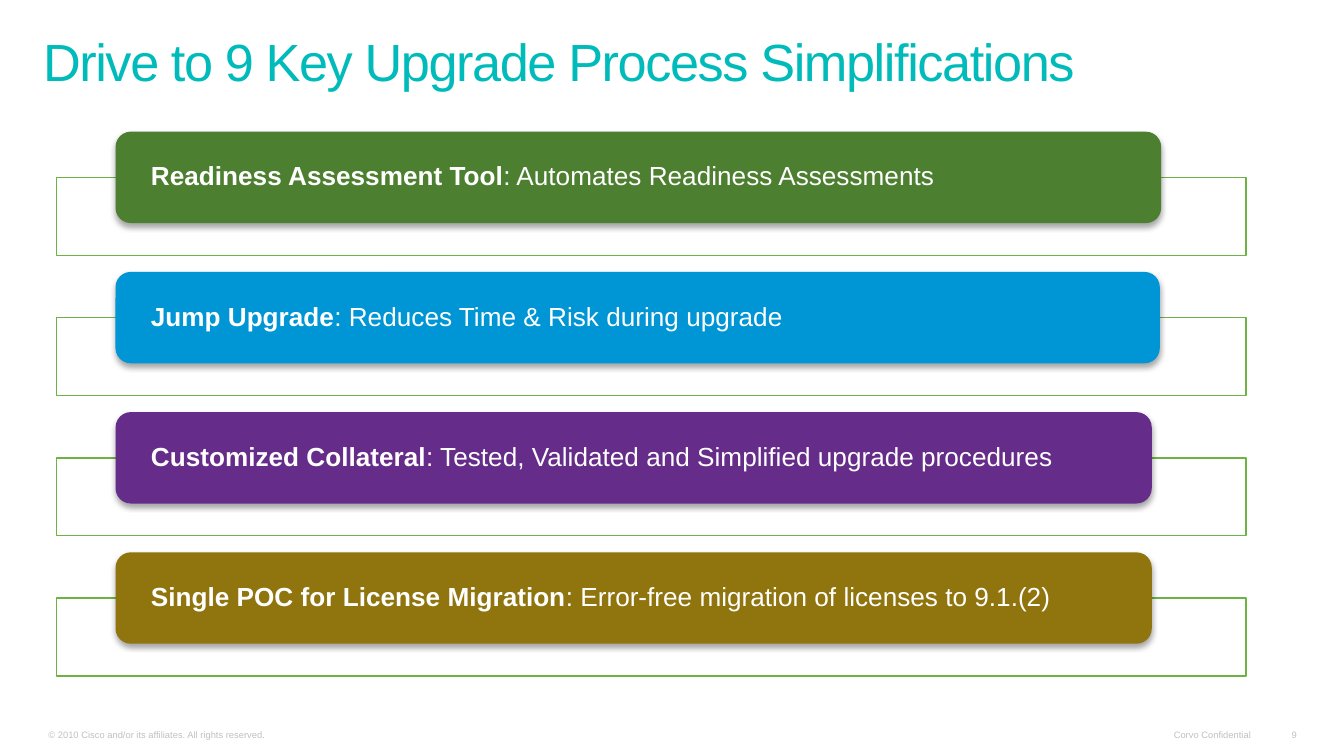
from lxml import etree
from pptx import Presentation
from pptx.dml.color import RGBColor
from pptx.enum.shapes import MSO_SHAPE
from pptx.enum.text import MSO_ANCHOR, MSO_AUTO_SIZE, PP_ALIGN
from pptx.oxml.ns import qn
from pptx.util import Inches, Pt

RECTANGLE = MSO_SHAPE.RECTANGLE
ROUNDED = MSO_SHAPE.ROUNDED_RECTANGLE
MIDDLE, BOTTOM = MSO_ANCHOR.MIDDLE, MSO_ANCHOR.BOTTOM
LEFT, RIGHT = PP_ALIGN.LEFT, PP_ALIGN.RIGHT
NO_AUTOFIT = MSO_AUTO_SIZE.NONE

COLORS = {
    "title": "01BBBB",
    "frame": "6DB344",
    "white": "FFFFFF",
    "footer": "C0C0C0",
    "shadow": "000000",
    "green": "4D7F30",
    "blue": "0096D6",
    "purple": "652D89",
    "gold": "90750F",
}

SIMPLIFICATIONS = [
    ("Readiness Assessment Tool", ": Automates Readiness Assessments", "green", 7.78),
    ("Jump Upgrade", ": Reduces Time & Risk during upgrade", "blue", 7.77),
    ("Customized Collateral", ": Tested, Validated and Simplified upgrade procedures", "purple", 7.71),
    ("Single POC for License Migration", ": Error-free migration of licenses to 9.1.(2)", "gold", 7.71),
]
FIRST_TOP, LAST_TOP = 0.98, 4.11
PITCH = (LAST_TOP - FIRST_TOP) / (len(SIMPLIFICATIONS) - 1)

FOOTERS = [
    ("© 2010 Cisco and/or its affiliates. All rights reserved.", 0.29, 3.74, LEFT),
    ("Corvo Confidential", 8.68, 0.7, RIGHT),
    ("9", 9.49, 0.23, RIGHT),
]


class SlideBuilder:
    font_name = "Arial"

    def __init__(self, slide):
        self.slide = slide

    def color(self, name):
        return RGBColor.from_string(COLORS[name])

    def style(self, run, size, color, bold=False):
        run.font.name = self.font_name
        run.font.size = Pt(size)
        run.font.bold = bold
        run.font.color.rgb = self.color(color)

    def set_frame(self, frame, anchor, side, edge, wrap=True):
        frame.auto_size = NO_AUTOFIT
        frame.word_wrap = wrap
        frame.vertical_anchor = anchor
        frame.margin_left = frame.margin_right = Inches(side)
        frame.margin_top = frame.margin_bottom = Inches(edge)

    def title(self, text):
        heading = self.slide.shapes.title
        heading.left, heading.top = Inches(0.25), Inches(0.03)
        heading.width, heading.height = Inches(9.39), Inches(0.69)
        self.set_frame(heading.text_frame, BOTTOM, 0.07, 0.04)
        heading.text_frame.text = text
        paragraph = heading.text_frame.paragraphs[0]
        paragraph.alignment = LEFT
        paragraph.line_spacing = 0.8
        run = paragraph.runs[0]
        self.style(run, 28, "title")
        run.font._element.set("spc", "-75")

    def frame(self, top):
        box = self.slide.shapes.add_shape(
            RECTANGLE, Inches(0.42), Inches(top), Inches(8.85), Inches(0.58))
        box.shadow.inherit = False
        box.fill.solid()
        box.fill.fore_color.rgb = self.color("white")
        fill_color = box.fill._xPr.find(qn("a:solidFill"))[0]
        etree.SubElement(fill_color, qn("a:alpha"), val="90000")
        box.line.color.rgb = self.color("frame")
        box.line.width = Pt(0.75)

    def add_shadow(self, shape):
        shape.shadow.inherit = False
        effects = shape._element.spPr.find(qn("a:effectLst"))
        shadow = etree.SubElement(
            effects, qn("a:outerShdw"), blurRad=str(Pt(3.1)), dist=str(Pt(1.8)),
            dir="5400000", rotWithShape="0")
        tint = etree.SubElement(shadow, qn("a:srgbClr"), val=COLORS["shadow"])
        etree.SubElement(tint, qn("a:alpha"), val="35000")

    def banner(self, name, benefit, color, top, width):
        bar = self.slide.shapes.add_shape(
            ROUNDED, Inches(0.86), Inches(top), Inches(width), Inches(0.68))
        bar.fill.solid()
        bar.fill.fore_color.rgb = self.color(color)
        bar.line.fill.background()
        self.add_shadow(bar)
        self.set_frame(bar.text_frame, MIDDLE, 0.23, 0)
        paragraph = bar.text_frame.paragraphs[0]
        paragraph.alignment = LEFT
        paragraph.line_spacing = 0.9
        for text, bold in ((name, True), (benefit, False)):
            run = paragraph.add_run()
            run.text = text
            self.style(run, 14, "white", bold)

    def footer(self, text, left, width, alignment):
        note = self.slide.shapes.add_textbox(
            Inches(left), Inches(5.38), Inches(width), Inches(0.16))
        self.set_frame(note.text_frame, BOTTOM, 0.07, 0.03, wrap=alignment == LEFT)
        note.text_frame.text = text
        paragraph = note.text_frame.paragraphs[0]
        paragraph.alignment = alignment
        self.style(paragraph.runs[0], 5, "footer")


def main():
    presentation = Presentation()
    presentation.slide_width = Inches(10)
    presentation.slide_height = presentation.slide_width * 9 // 16
    builder = SlideBuilder(presentation.slides.add_slide(presentation.slide_layouts[5]))

    builder.title("Drive to 9 Key Upgrade Process Simplifications")
    for index, (name, benefit, color, width) in enumerate(SIMPLIFICATIONS):
        top = FIRST_TOP + index * PITCH
        builder.frame(top + 0.34)
        builder.banner(name, benefit, color, top, width)
    for text, left, width, alignment in FOOTERS:
        builder.footer(text, left, width, alignment)

    presentation.save("out.pptx")


if __name__ == "__main__":
    main()
